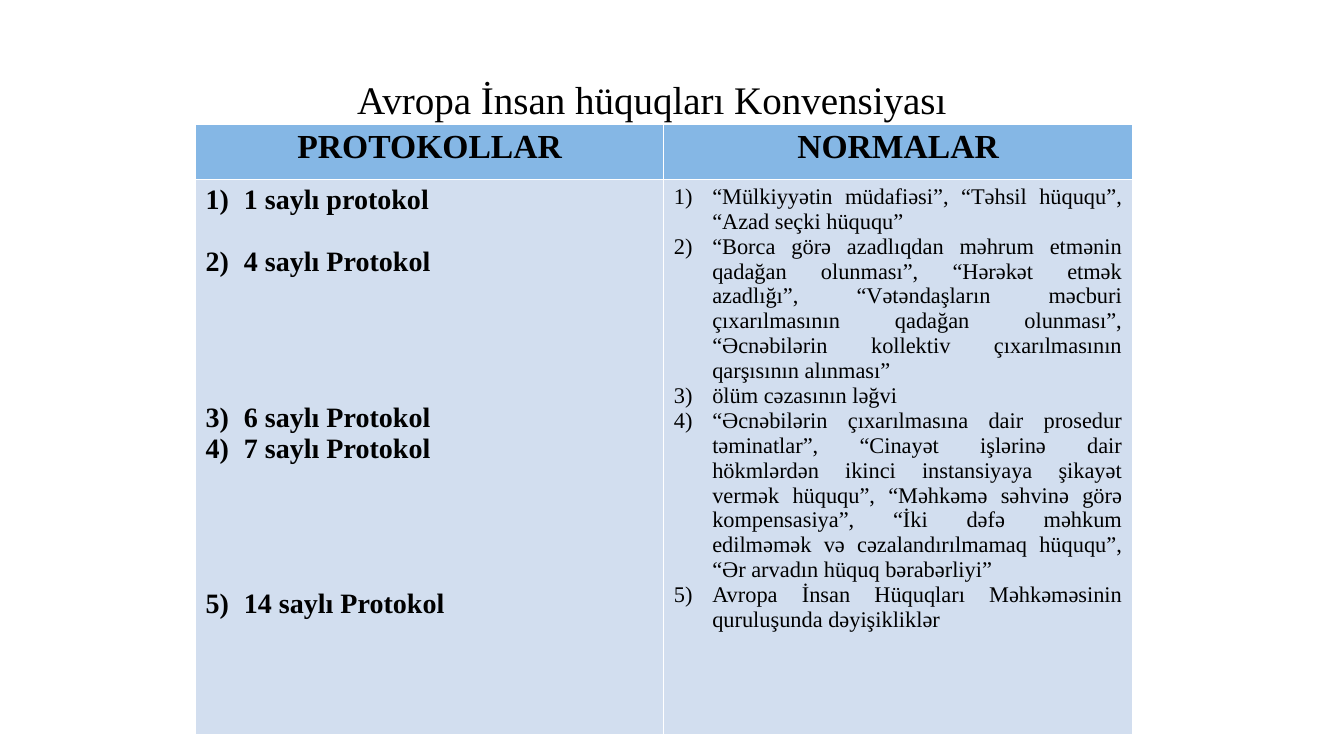
from dataclasses import dataclass

from lxml import etree
from pptx import Presentation
from pptx import util as u
from pptx.dml import color
from pptx.enum import text
from pptx.oxml import ns


@dataclass(frozen=True)
class Theme:
    face: str = "Times New Roman"
    ink: str = "000000"
    head: str = "85B7E5"
    body: str = "D2DEEF"
    rule: str = "FFFFFF"
    title: float = 27.9
    label: float = 24
    item: float = 20
    note: float = 16
    pitch: float = 22.2


@dataclass(frozen=True)
class Item:
    words: str
    gap: int = 0


@dataclass(frozen=True)
class Column:
    label: str
    size: float
    bold: bool
    align: text.PP_ALIGN
    items: tuple[Item, ...]


THEME = Theme()
WIDE, HIGH = u.Inches(13.33), u.Inches(7.5)
INDENT = u.Inches(0.38)
COLUMNS = (
    Column("PROTOKOLLAR", THEME.item, True, text.PP_ALIGN.LEFT, (
        Item("1 saylı protokol"),
        Item("4 saylı Protokol", 1),
        Item("6 saylı Protokol", 4),
        Item("7 saylı Protokol"),
        Item("14 saylı Protokol", 4),
    )),
    Column("NORMALAR", THEME.note, False, text.PP_ALIGN.JUSTIFY, (
        Item("“Mülkiyyətin müdafiəsi”, “Təhsil hüququ”, “Azad seçki hüququ”"),
        Item("“Borca görə azadlıqdan məhrum etmənin qadağan olunması”, "
             "“Hərəkət etmək azadlığı”, “Vətəndaşların məcburi "
             "çıxarılmasının qadağan olunması”, “Əcnəbilərin kollektiv "
             "çıxarılmasının qarşısının alınması”"),
        Item("ölüm cəzasının ləğvi"),
        Item("“Əcnəbilərin çıxarılmasına dair prosedur təminatlar”, "
             "“Cinayət işlərinə dair hökmlərdən ikinci instansiyaya şikayət "
             "vermək hüququ”, “Məhkəmə səhvinə görə kompensasiya”, “İki dəfə "
             "məhkum edilməmək və cəzalandırılmamaq hüququ”, “Ər arvadın "
             "hüquq bərabərliyi” "),
        Item("Avropa İnsan Hüquqları Məhkəməsinin quruluşunda dəyişikliklər"),
    )),
)


def across(share: float) -> int:
    return round(WIDE * share / 100)


def down(share: float) -> int:
    return round(HIGH * share / 100)


def style(para, size: float, bold: bool, align: text.PP_ALIGN) -> None:
    para.alignment = align
    font = para.font
    font.name, font.size, font.bold = THEME.face, u.Pt(size), bold
    font.color.rgb = color.RGBColor.from_string(THEME.ink)


def number(para) -> None:
    props = para._p.get_or_add_pPr()
    props.set("marL", str(INDENT))
    props.set("indent", str(-INDENT))
    etree.SubElement(props, ns.qn("a:buAutoNum"), type="arabicParenR")


def paint(cell, fill: str) -> None:
    cell.fill.solid()
    cell.fill.fore_color.rgb = color.RGBColor.from_string(fill)
    props = cell._tc.get_or_add_tcPr()
    for place, side in enumerate("LRTB"):
        line = etree.Element(ns.qn(f"a:ln{side}"), w=str(u.Pt(1)))
        solid = etree.SubElement(line, ns.qn("a:solidFill"))
        etree.SubElement(solid, ns.qn("a:srgbClr"), val=THEME.rule)
        props.insert(place, line)


def add_title(slide) -> None:
    title = slide.shapes.title
    title.left, title.top = across(14.55), down(10.67)
    title.width, title.height = across(68.64), down(12.13)
    frame = title.text_frame
    frame.text = "Avropa İnsan hüquqları Konvensiyası "
    frame.auto_size = text.MSO_AUTO_SIZE.NONE
    frame.vertical_anchor = text.MSO_ANCHOR.TOP
    frame.margin_top = 0
    para = frame.paragraphs[0]
    para.line_spacing = 0.9
    style(para, THEME.title, False, text.PP_ALIGN.CENTER)


def fill_column(table, place: int, column: Column) -> None:
    head, body = table.cell(0, place), table.cell(1, place)
    paint(head, THEME.head)
    paint(body, THEME.body)
    head.text_frame.text = column.label
    style(head.text_frame.paragraphs[0], THEME.label, True,
          text.PP_ALIGN.CENTER)
    frame = body.text_frame
    frame.text = "\n".join(item.words for item in column.items)
    for para, item in zip(frame.paragraphs, column.items):
        number(para)
        para.space_before = u.Pt(item.gap * THEME.pitch)
        style(para, column.size, column.bold, column.align)


def add_grid(slide) -> None:
    rows = (7.33, 73.47)
    frame = slide.shapes.add_table(
        len(rows), len(COLUMNS), across(14.55), down(16.4),
        across(69.7), down(sum(rows)))
    table = frame.table
    table.horz_banding = False
    for row, share in zip(table.rows, rows):
        row.height = down(share)
    for place, column in enumerate(COLUMNS):
        fill_column(table, place, column)


def main() -> None:
    deck = Presentation()
    deck.slide_width, deck.slide_height = WIDE, HIGH
    slide = deck.slides.add_slide(deck.slide_layouts[5])
    add_title(slide)
    add_grid(slide)
    deck.save("out.pptx")


if __name__ == "__main__":
    main()
